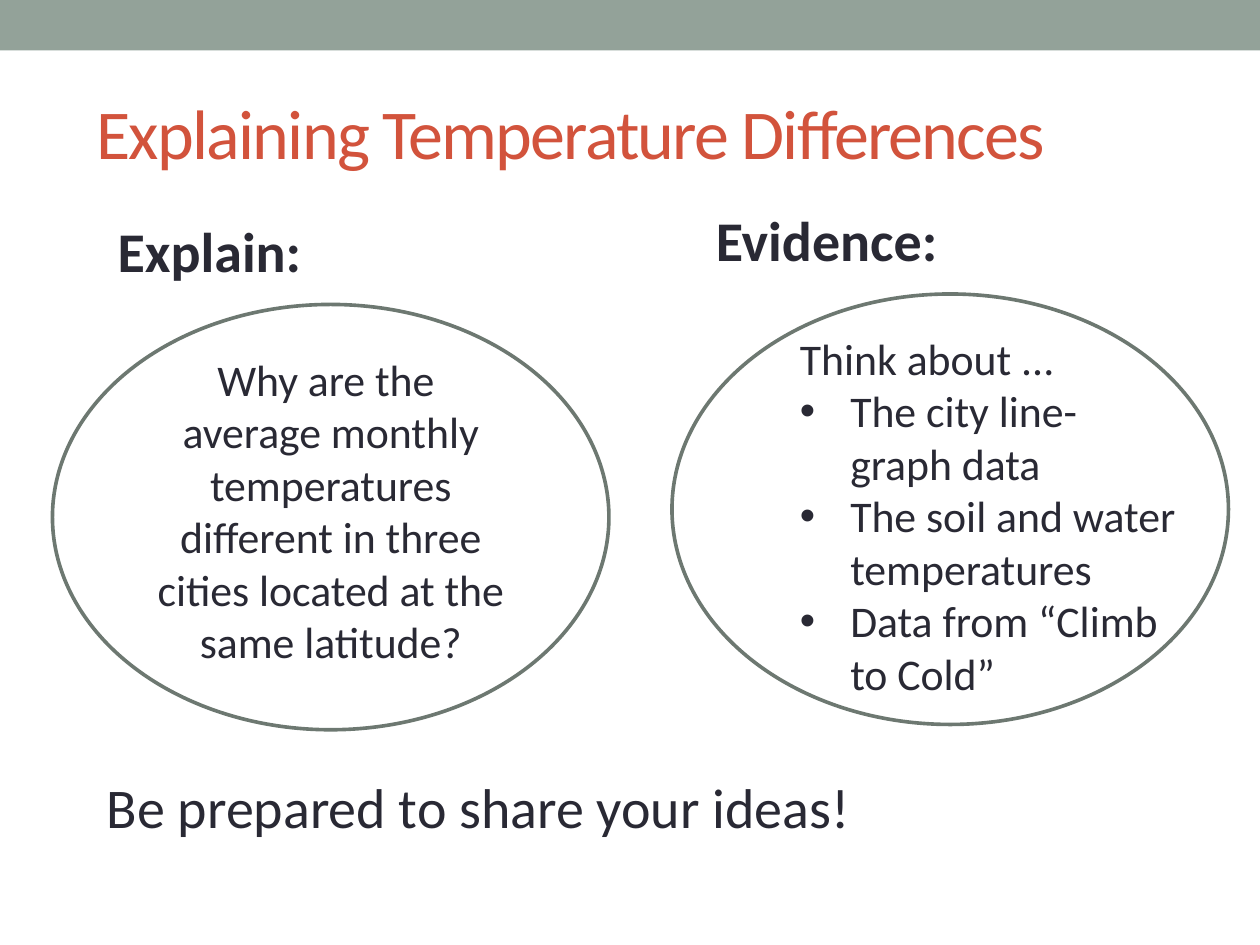
from lxml import etree
from pptx import Presentation
from pptx.dml.color import RGBColor
from pptx.enum.shapes import MSO_SHAPE
from pptx.enum.text import MSO_ANCHOR, MSO_AUTO_SIZE, PP_ALIGN
from pptx.oxml.ns import qn
from pptx.util import Pt

RECTANGLE, OVAL = MSO_SHAPE.RECTANGLE, MSO_SHAPE.OVAL
TOP, MIDDLE = MSO_ANCHOR.TOP, MSO_ANCHOR.MIDDLE
LEFT, CENTER = PP_ALIGN.LEFT, PP_ALIGN.CENTER
NO_AUTOFIT = MSO_AUTO_SIZE.NONE

COLORS = {"band": "93A299", "title": "D2533C", "text": "292934", "outline": "6D7871"}
FONT_NAME = "Calibri"
SLIDE_SIZE = (720, 540)
BAND_BOX = (0, 0, 720, 28.8)
OVAL_BOXES = [(30, 174, 318, 243), (384, 168, 318, 246)]
OUTLINE_WIDTH = 2.08

HEADING = {"size": 32, "bold": True, "indent": 14.4}
QUESTION = {"size": 25, "align": CENTER}
PLAIN = {"size": 25}
BULLET = {"size": 25, "indent": 28.8, "bullet": "•"}

TITLE = ((48, 36, 636, 78), [("Explaining Temperature Differences",
                              {"size": 40, "color": "title", "spacing": -100})])
EXPLAIN = ((60, 120, 300, 102), [("Explain:", HEADING)])
TEXT_BOXES = [
    ((402, 114, 294, 88.5), [("Evidence:", HEADING)]),
    ((54, 438, 648, 46), [("Be prepared to share your ideas!", {"size": 32})]),
    ((450, 186, 240, 225), [
        ("Think about ...", PLAIN),
        ("The city line-\vgraph data", BULLET),
        ("The soil and water temperatures", BULLET),
        ("Data from “Climb to Cold”", BULLET),
    ]),
    ((72, 198, 234, 189), [
        ("Why are the \vaverage monthly temperatures different in three cities "
         "located at the same latitude?", QUESTION),
    ]),
]


def color(name):
    return RGBColor.from_string(COLORS[name])


def points(box):
    return [Pt(value) for value in box]


def format_paragraph(paragraph, style):
    paragraph.alignment = style.get("align", LEFT)
    paragraph.space_before = Pt(0)
    indent = Pt(style.get("indent", 0))
    properties = paragraph._p.get_or_add_pPr()
    properties.set("marL", str(indent))
    properties.set("indent", str(-indent))
    if "bullet" in style:
        font = etree.SubElement(properties, qn("a:buFont"))
        font.set("typeface", "Arial")
        etree.SubElement(properties, qn("a:buChar")).set("char", style["bullet"])
    else:
        etree.SubElement(properties, qn("a:buNone"))
    font_values = {"name": FONT_NAME, "size": Pt(style["size"]),
                   "bold": style.get("bold", False)}
    for run in paragraph.runs:
        for name, value in font_values.items():
            setattr(run.font, name, value)
        run.font.color.rgb = color(style.get("color", "text"))
        if "spacing" in style:
            run._r.get_or_add_rPr().set("spc", str(style["spacing"]))


def fill_text(shape, content, anchor=TOP):
    box, paragraphs = content
    shape.left, shape.top, shape.width, shape.height = points(box)
    frame = shape.text_frame
    frame_values = {"word_wrap": True, "auto_size": NO_AUTOFIT, "vertical_anchor": anchor}
    for name, value in frame_values.items():
        setattr(frame, name, value)
    for index, (text, style) in enumerate(paragraphs):
        paragraph = frame.add_paragraph() if index else frame.paragraphs[0]
        paragraph.text = text
        format_paragraph(paragraph, style)


def add_plain_shape(slide, kind, box):
    shape = slide.shapes.add_shape(kind, *points(box))
    shape.shadow.inherit = False
    return shape


def main():
    presentation = Presentation()
    presentation.slide_width, presentation.slide_height = points(SLIDE_SIZE)
    slide = presentation.slides.add_slide(presentation.slide_layouts[1])

    band = add_plain_shape(slide, RECTANGLE, BAND_BOX)
    band.fill.solid()
    band.fill.fore_color.rgb = color("band")
    band.line.fill.background()

    fill_text(slide.shapes.title, TITLE, MIDDLE)
    fill_text(slide.placeholders[1], EXPLAIN)

    for box in OVAL_BOXES:
        oval = add_plain_shape(slide, OVAL, box)
        oval.fill.background()
        oval.line.color.rgb = color("outline")
        oval.line.width = Pt(OUTLINE_WIDTH)

    for content in TEXT_BOXES:
        fill_text(slide.shapes.add_textbox(*points(content[0])), content)

    presentation.save("out.pptx")


if __name__ == "__main__":
    main()
